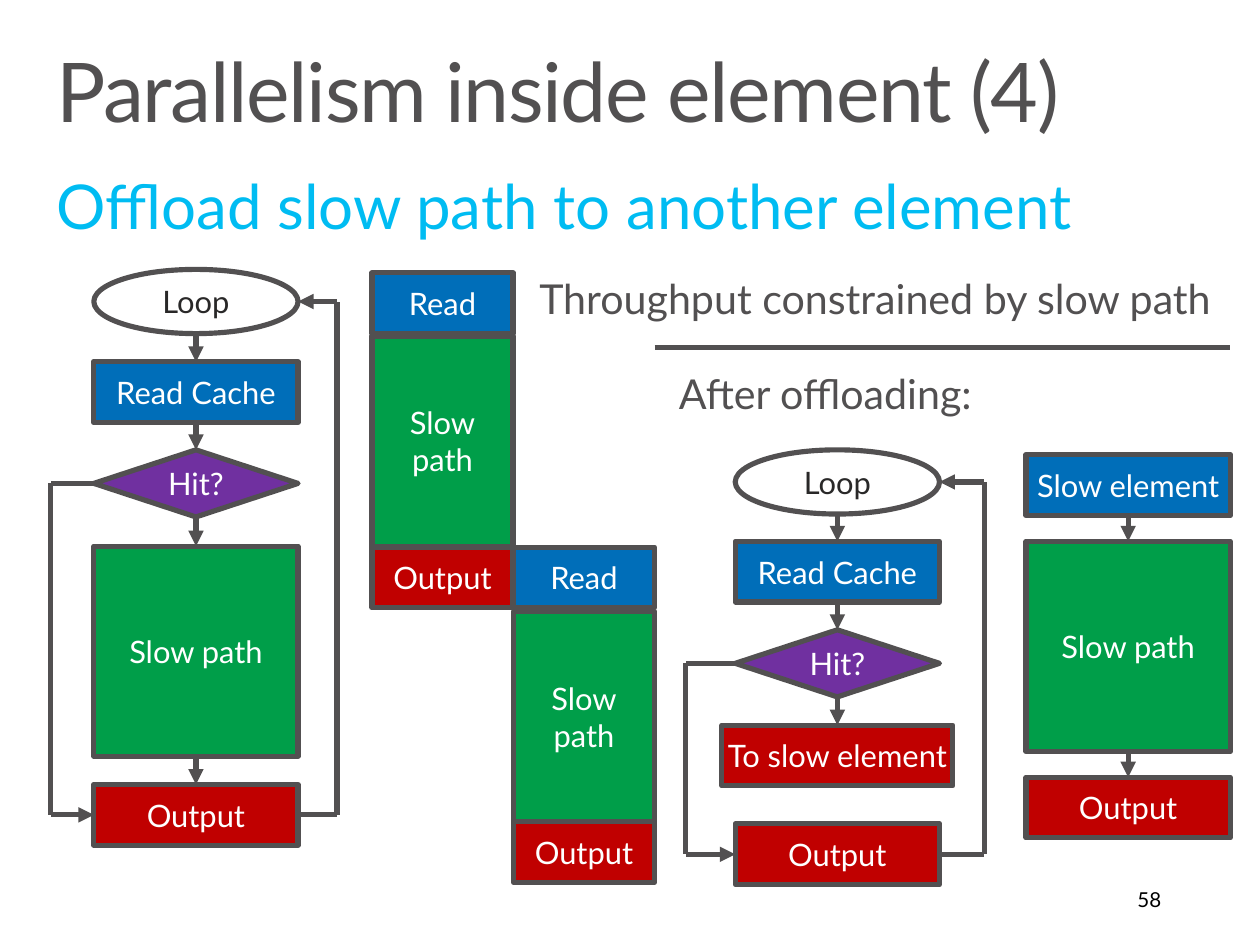
"""Build the slide on offloading a slow path to another element."""
from lxml import etree
from pptx import Presentation
from pptx.dml.color import RGBColor
from pptx.enum.shapes import MSO_CONNECTOR, MSO_SHAPE
from pptx.enum.text import MSO_ANCHOR, PP_ALIGN
from pptx.oxml.ns import qn
from pptx.util import Cm, Pt

RECT, OVAL, DIAMOND = MSO_SHAPE.RECTANGLE, MSO_SHAPE.OVAL, MSO_SHAPE.DIAMOND
STRAIGHT = MSO_CONNECTOR.STRAIGHT
TOP, MIDDLE = MSO_ANCHOR.TOP, MSO_ANCHOR.MIDDLE
LEFT, CENTER, RIGHT = PP_ALIGN.LEFT, PP_ALIGN.CENTER, PP_ALIGN.RIGHT
GRAY, WHITE, BLACK, CYAN = "525051", "FFFFFF", "000000", "00BCF2"
FONT = "Lato"
KINDS = {
    "loop": (OVAL, WHITE, "292828", 1.32),
    "read": (RECT, "006EB9", WHITE, 1.25),
    "hit": (DIAMOND, "7030A0", WHITE, 1.38),
    "slow": (RECT, "009E49", WHITE, 4.32),
    "out": (RECT, "C00000", WHITE, 1.25),
}


def color(text):
    return RGBColor.from_string(text)


class Board:
    """Draw boxes, arrows and text on one slide in a shared style."""

    def __init__(self, slide):
        self.shapes = slide.shapes

    def letter(self, frame, text, size, ink, align, anchor, pad):
        frame.text = text
        frame.word_wrap = True
        frame.vertical_anchor = anchor
        frame.margin_left = frame.margin_right = Cm(pad[0])
        frame.margin_top = frame.margin_bottom = Cm(pad[1])
        para = frame.paragraphs[0]
        para.alignment = align
        for run in para.runs:
            run.font.name = FONT
            run.font.size = Pt(size)
            run.font.color.rgb = color(ink)
        return para

    def label(self, text, place, size, ink, pad, align=LEFT, anchor=TOP):
        box = self.shapes.add_textbox(*map(Cm, place))
        para = self.letter(box.text_frame, text, size, ink, align, anchor, pad)
        para.line_spacing = 0.9
        return para

    def box(self, kind, text, mid, top, width=4.2):
        form, fill, ink, height = KINDS[kind]
        box = self.shapes.add_shape(
            form, Cm(mid - width / 2), Cm(top), Cm(width), Cm(height))
        box.shadow.inherit = False
        box.fill.solid()
        box.fill.fore_color.rgb = color(fill)
        box.line.color.rgb = color(GRAY)
        box.line.width = Pt(3)
        self.letter(box.text_frame, text, 18, ink, CENTER, MIDDLE, (0, 0.1))
        return box

    def line(self, start, end, head=False):
        line = self.shapes.add_connector(STRAIGHT, *start, *end)
        line.line.color.rgb = color(GRAY)
        line.line.width = Pt(3)
        if head:
            edge = line._element.spPr.find(qn("a:ln"))
            etree.SubElement(edge, qn("a:tailEnd")).set("type", "triangle")
        etree.SubElement(line._element.spPr, qn("a:effectLst"))
        return line

    def spot(self, box, side):
        x, y = ((1, 0), (0, 1), (1, 2), (2, 1))[side]
        return box.left + box.width * x // 2, box.top + box.height * y // 2

    def leave(self, line, box, side):
        if box.auto_shape_type != OVAL:
            line.begin_connect(box, side)

    def enter(self, line, box, side):
        if box.auto_shape_type != OVAL:
            line.end_connect(box, side)

    def chain(self, boxes):
        for one, two in zip(boxes, boxes[1:]):
            line = self.line(self.spot(one, 2), self.spot(two, 0), True)
            self.leave(line, one, 2)
            self.enter(line, two, 0)

    def detour(self, one, two, side, x):
        start, end = self.spot(one, side), self.spot(two, side)
        high, low = (Cm(x), start[1]), (Cm(x), end[1])
        self.leave(self.line(start, high), one, side)
        self.line(high, low)
        self.enter(self.line(low, end, True), two, side)

    def flow(self, mid, tops, slow, width, count, sides):
        rows = (("loop", "Loop", 4.2), ("read", "Read Cache", 4.2),
                ("hit", "Hit?", 4.2), (*slow, width), ("out", "Output", 4.2))
        boxes = [self.box(kind, text, mid, top, wide)
                 for (kind, text, wide), top in zip(rows, tops)]
        self.chain(boxes[:count])
        loop, hit, out = boxes[0], boxes[2], boxes[4]
        self.detour(hit, out, 1, sides[0])
        self.detour(out, loop, 3, sides[1])


def main():
    deck = Presentation()
    deck.slide_width, deck.slide_height = Cm(25.91), Cm(19.43)
    board = Board(deck.slides.add_slide(deck.slide_layouts[6]))

    title = board.label("Parallelism inside element (4)",
                        (0.76, 0.81, 24.38, 2.54), 48, GRAY, (0.4, 0.25))
    title.runs[0]._r.get_or_add_rPr().set("spc", "-80")
    board.label("Offload slow path to another element",
                (0.76, 3.38, 24.38, 1.9), 36, CYAN, (0.4, 0.25))

    board.flow(4.03, (5.54, 7.44, 9.25, 11.23, 16.13),
               ("slow", "Slow path"), 4.2, 5, (1.04, 6.93))
    board.flow(17.22, (9.25, 11.13, 12.95, 14.91, 16.94),
               ("out", "To slow element"), 4.75, 4, (14.1, 20.24))

    for mid, tops in ((9.1, (5.61, 6.91, 11.25)),
                      (12.01, (11.25, 12.57, 16.89))):
        parts = ("read", "Read"), ("slow", "Slow\vpath"), ("out", "Output")
        for (kind, text), top in zip(parts, tops):
            board.box(kind, text, mid, top, 2.9)

    steps = (("read", "Slow element", 9.35), ("slow", "Slow path", 11.13),
             ("out", "Output", 15.98))
    board.chain([board.box(kind, text, 23.2, top) for kind, text, top in steps])

    for text, place in (
            ("Throughput constrained by slow path", (10.59, 5.33, 15.16, 1.75)),
            ("After offloading:", (13.46, 7.29, 7.16, 1.75))):
        note = board.label(text, place, 24, GRAY, (0.5, 0.4))
        note.space_after = Pt(6)
    board.line((Cm(13.46), Cm(7.14)), (Cm(25.3), Cm(7.14)))
    board.label("58", (18.29, 18.01, 5.84, 1.04), 12, BLACK, (0.25, 0.13),
                RIGHT, MIDDLE)
    deck.save("out.pptx")


if __name__ == "__main__":
    main()
